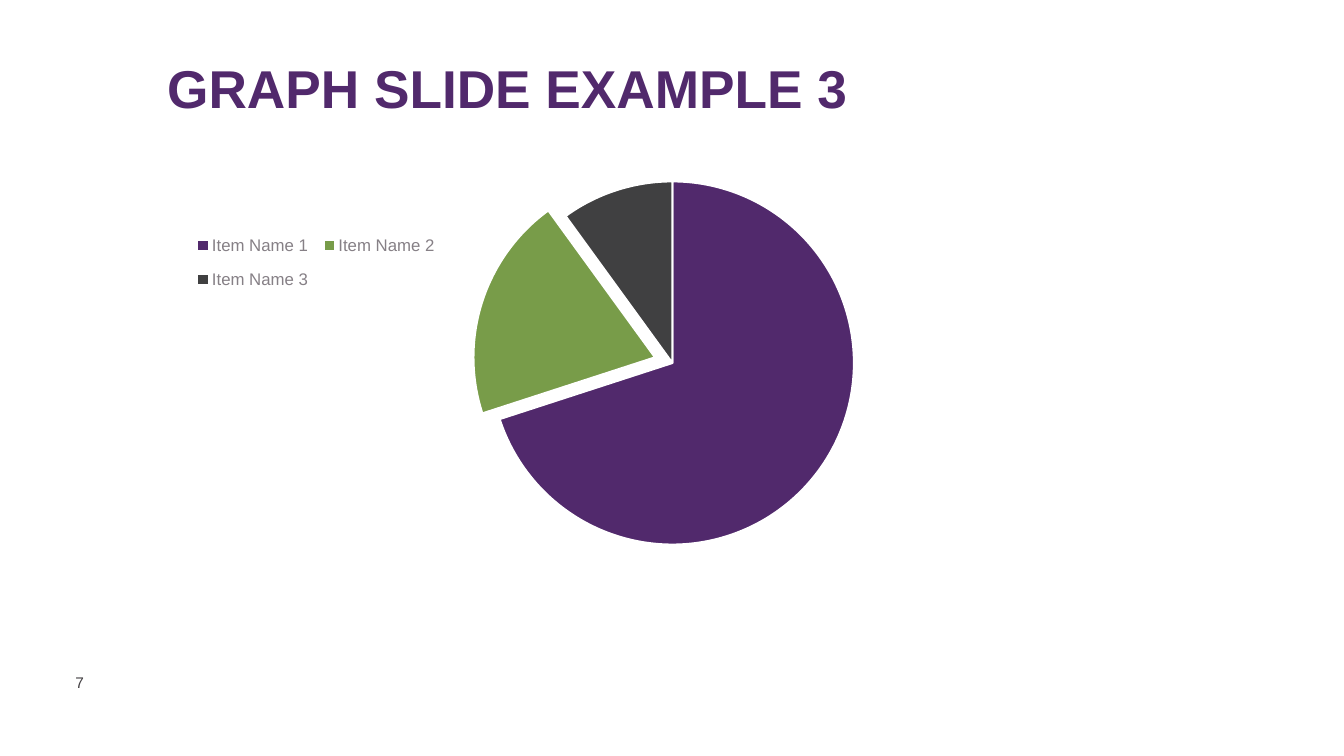
from lxml import etree
from pptx import Presentation
from pptx.chart.data import CategoryChartData
from pptx.dml.color import RGBColor
from pptx.enum.chart import XL_CHART_TYPE as ChartType, XL_LEGEND_POSITION as LegendPos
from pptx.enum.text import MSO_ANCHOR as Anchor, MSO_AUTO_SIZE as AutoSize, PP_ALIGN as Align
from pptx.oxml.ns import qn
from pptx.util import Cm, Pt

PURPLE, GREEN, CHARCOAL = "51296C", "789C49", "404041"
TEXT, LEGEND_TEXT, WHITE = "423F42", "868086", "FFFFFF"


def set_font(font, size, color, bold=False):
    for name, value in {"name": "Arial", "size": Pt(size), "bold": bold}.items():
        setattr(font, name, value)
    font.color.rgb = RGBColor.from_string(color)


def place(element, index, **fractions):
    """Give a chart part a manual layout, in fractions of the chart area."""
    for old in element.findall(qn("c:layout")):
        element.remove(old)
    layout = etree.Element(qn("c:layout"))
    manual = etree.SubElement(layout, qn("c:manualLayout"))
    settings = {"xMode": "edge", "yMode": "edge", **fractions}
    if element.tag == qn("c:plotArea"):
        settings = {"layoutTarget": "inner", **settings}
    for name, value in settings.items():
        etree.SubElement(manual, qn(f"c:{name}")).set("val", str(value))
    element.insert(index, layout)


prs = Presentation()
prs.slide_width, prs.slide_height = Cm(33.87), Cm(19.05)
s = prs.slides.add_slide(prs.slide_layouts[5])

# Title
title = s.shapes.title
title.left, title.top, title.width, title.height = Cm(3.96), Cm(1.17), Cm(24.59), Cm(2.24)
tf = title.text_frame
tf.text = "GRAPH SLIDE EXAMPLE 3"
tf.auto_size = AutoSize.NONE
tf.vertical_anchor = Anchor.MIDDLE
p = tf.paragraphs[0]
p.alignment = Align.LEFT
p.line_spacing = 0.9
set_font(p.runs[0].font, 38, PURPLE, bold=True)

# Pie chart
data = CategoryChartData(number_format="General")
data.categories = ["Item Name 1", "Item Name 2", "Item Name 3"]
data.add_series("Series 1", (70, 20, 10))
chart = s.shapes.add_chart(
    ChartType.PIE, Cm(3.94), Cm(4.14), Cm(26.01), Cm(10.77), data
).chart
set_font(chart.font, 10, TEXT)
chart.has_title = False
plot = chart.plots[0]
plot.vary_by_categories = True
series = plot.series[0]
for i, color in enumerate([PURPLE, GREEN, CHARCOAL]):
    fmt = series.points[i].format
    fmt.fill.solid()
    fmt.fill.fore_color.rgb = RGBColor.from_string(color)
    fmt.line.color.rgb = RGBColor.from_string(WHITE)
    fmt.line.width = Pt(1.5)

# Pull the second slice out
slice_2 = series.points[1].format.fill._xPr.getparent()
explosion = etree.Element(qn("c:explosion"))
explosion.set("val", "10")
slice_2.find(qn("c:spPr")).addprevious(explosion)

chart.has_legend = True
legend = chart.legend
legend.position = LegendPos.BOTTOM
legend.include_in_layout = False
set_font(legend.font, 12, LEGEND_TEXT)
place(legend._element, 1, x=0.03, y=0.13, w=0.25, h=0.2)
place(plot._element.getparent(), 0, x=0.32, y=0.04, w=0.36, h=0.85)

# Slide number
number = s.shapes.add_textbox(Cm(1.65), Cm(16.84), Cm(1.47), Cm(1.37))
tf = number.text_frame
tf.word_wrap = True
tf.text = "7"
set_font(tf.paragraphs[0].runs[0].font, 11, TEXT)

prs.save("out.pptx")
